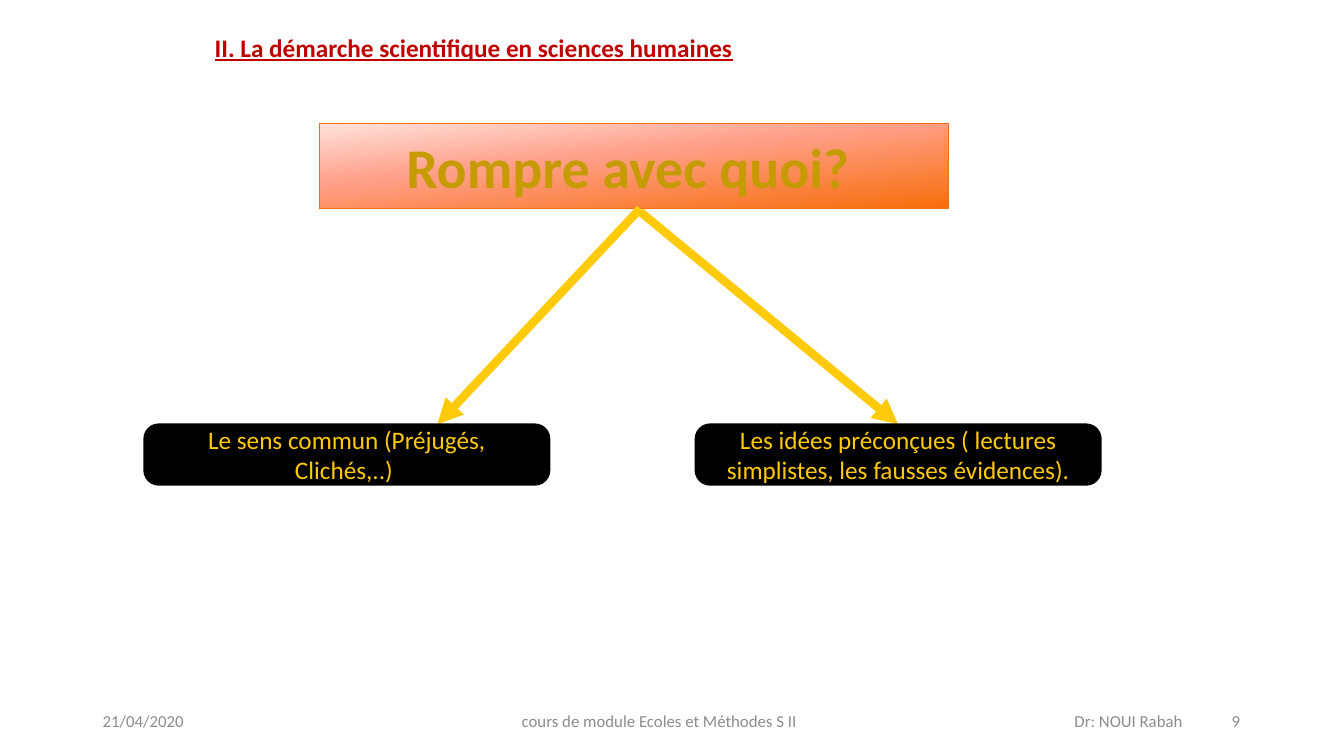
"""Builds the slide on what scientific reasoning must break away from."""
from copy import deepcopy
from dataclasses import dataclass

from lxml import etree
from pptx import Presentation
from pptx.dml.color import RGBColor
from pptx.enum.shapes import MSO_CONNECTOR, MSO_SHAPE
from pptx.enum.text import MSO_ANCHOR, PP_ALIGN
from pptx.oxml.ns import qn
from pptx.util import Inches, Pt

LEFT, CENTER = PP_ALIGN.LEFT, PP_ALIGN.CENTER
TOP, MIDDLE = MSO_ANCHOR.TOP, MSO_ANCHOR.MIDDLE
RECTANGLE, ROUNDED = MSO_SHAPE.RECTANGLE, MSO_SHAPE.ROUNDED_RECTANGLE
STRAIGHT = MSO_CONNECTOR.STRAIGHT
WIDTH, HEIGHT = Inches(13.333), Inches(7.5)
TOP_SITE = 0


@dataclass(frozen=True)
class Theme:
    """Colours, font and type sizes of the slide."""
    font: str = "Calibri"
    heading: str = "C00000"
    footer: str = "8C8C8C"
    question: str = "C59B00"
    question_edge: str = "EC7016"
    question_stops: tuple = ((0, "FFE1DA"), (0.4, "FFA08A"), (1, "F76E0B"))
    accent: str = "FFCA08"
    answer_fill: str = "000000"
    heading_size: int = 18
    footer_size: int = 12
    question_size: int = 40
    answer_size: int = 18


THEME = Theme()


def across(percent):
    """Return a share of the slide's width."""
    return round(WIDTH * percent / 100)


def down(percent):
    """Return a share of the slide's height."""
    return round(HEIGHT * percent / 100)


def place(left, top, width, height):
    """Turn percentages into a left, top, width and height."""
    return across(left), down(top), across(width), down(height)


def write(holder, words, size, color, align=CENTER, anchor=MIDDLE, bold=False):
    """Fill a shape with one styled paragraph and return it."""
    frame = holder.text_frame
    frame.word_wrap = True
    frame.vertical_anchor = anchor
    frame.text = words
    paragraph = frame.paragraphs[0]
    paragraph.alignment = align
    for run in paragraph.runs:
        run.font.name = THEME.font
        run.font.size = Pt(size)
        run.font.bold = bold
        run.font.color.rgb = RGBColor.from_string(color)
    return paragraph


def add_heading(slide, words):
    """Add the underlined section heading."""
    heading = slide.shapes.add_textbox(*place(15.23, 3.6, 40.35, 5.33))
    paragraph = write(heading, words, THEME.heading_size, THEME.heading, LEFT, TOP, True)
    paragraph.runs[0].font.underline = True
    heading.text_frame.word_wrap = False


def add_footer(slide, left, width, words, align):
    """Add one part of the footer and return it."""
    footer = slide.shapes.add_textbox(*place(left, 92.67, width, 5.33))
    write(footer, words, THEME.footer_size, THEME.footer, align)
    return footer


def add_author(slide, author, number):
    """Add the author with the slide number at a tab stop."""
    footer = add_footer(slide, 70.65, 22.5, f"{author}\t{number}", LEFT)
    footer.text_frame.margin_left = across(9.3)
    properties = footer.text_frame.paragraphs[0]._p.get_or_add_pPr()
    stops = etree.SubElement(properties, qn("a:tabLst"))
    etree.SubElement(stops, qn("a:tab"), pos=str(across(11.7)), algn="l")


def add_panel(slide, kind, area, edge, edge_width):
    """Add an outlined shape without shadow."""
    panel = slide.shapes.add_shape(kind, *place(*area))
    panel.shadow.inherit = False
    panel.line.color.rgb = RGBColor.from_string(edge)
    panel.line.width = Pt(edge_width)
    return panel


def add_question(slide, words):
    """Add the banner with its three-colour gradient."""
    banner = add_panel(slide, RECTANGLE, (23.78, 16.4, 46.8, 11.2), THEME.question_edge, 0.75)
    banner.fill.gradient()
    banner.fill.gradient_angle = 276
    stop_list = banner._element.spPr.find(qn("a:gradFill")).find(qn("a:gsLst"))
    stop_list.append(deepcopy(stop_list[0]))
    for stop, (position, color) in zip(banner.fill.gradient_stops, THEME.question_stops):
        stop.position = position
        stop.color.rgb = RGBColor.from_string(color)
    write(banner, words, THEME.question_size, THEME.question, bold=True)


def add_answer(slide, left, words):
    """Add a rounded answer box and return it."""
    answer = add_panel(slide, ROUNDED, (left, 56.13, 30.15, 8), THEME.answer_fill, 1.25)
    answer.adjustments[0] = 0.24
    answer.fill.solid()
    answer.fill.fore_color.rgb = RGBColor.from_string(THEME.answer_fill)
    write(answer, words, THEME.answer_size, THEME.accent)
    return answer


def add_arrow(slide, start_height, end_across):
    """Add a thick arrow from the banner down to an answer and return it."""
    arrow = slide.shapes.add_connector(
        STRAIGHT, across(47.63), down(start_height), across(end_across), down(56.13))
    arrow.line.color.rgb = RGBColor.from_string(THEME.accent)
    arrow.line.width = Pt(6)
    etree.SubElement(arrow.line._get_or_add_ln(), qn("a:tailEnd"), type="triangle")
    etree.SubElement(arrow._element.spPr, qn("a:effectLst"))
    return arrow


def main():
    """Build and save the slide."""
    deck = Presentation()
    deck.slide_width, deck.slide_height = WIDTH, HEIGHT
    slide = deck.slides.add_slide(deck.slide_layouts[6])
    add_heading(slide, "II. La démarche scientifique en sciences humaines")
    add_footer(slide, 6.9, 22.5, "21/04/2020", LEFT)
    add_footer(slide, 33.15, 31.8, "cours de module Ecoles et Méthodes S II", CENTER)
    add_author(slide, "Dr: NOUI Rabah", 9)
    add_question(slide, "Rompre avec quoi? ")
    add_arrow(slide, 27.6, 32.55)
    preconceptions_arrow = add_arrow(slide, 28, 66.83)
    add_answer(slide, 10.73, "Le sens commun (Préjugés, Clichés,..) ")
    preconceptions = add_answer(
        slide, 51.75, "Les idées préconçues ( lectures simplistes, les fausses évidences).")
    preconceptions_arrow.end_connect(preconceptions, TOP_SITE)
    deck.save("out.pptx")


if __name__ == "__main__":
    main()
